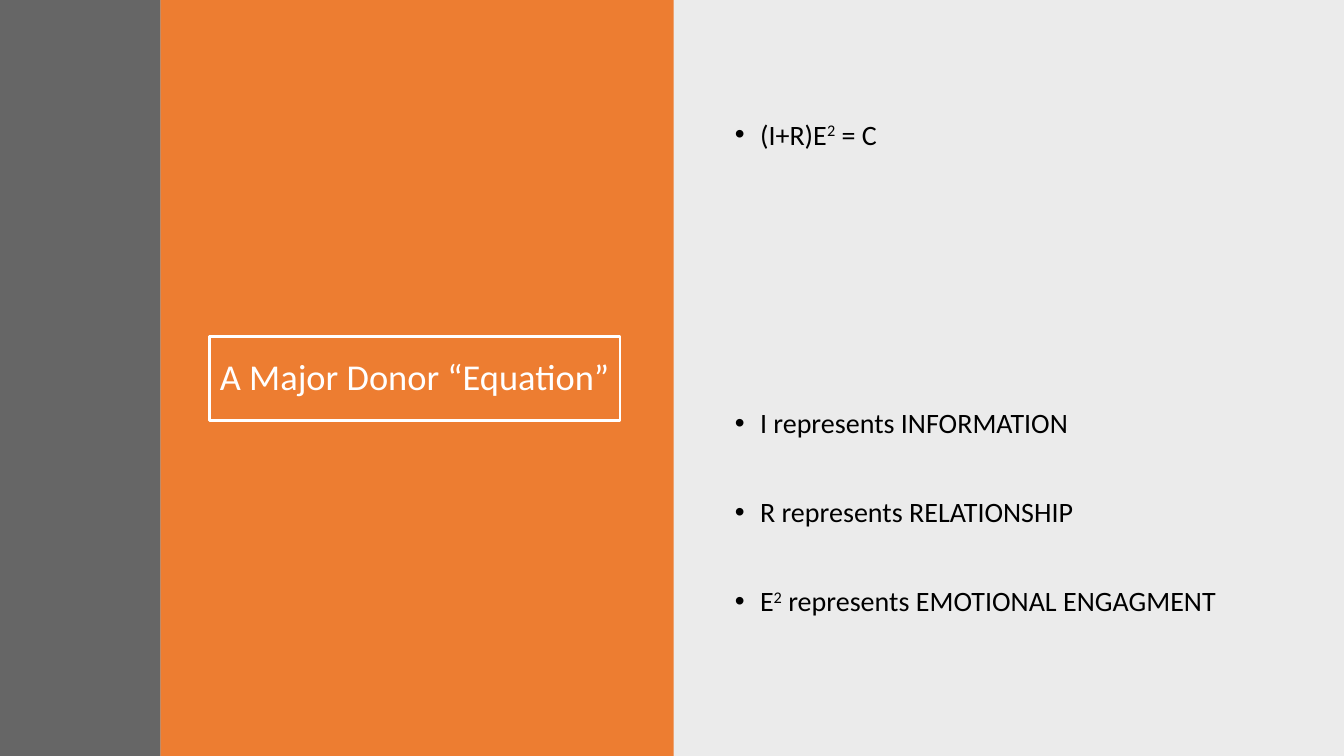
import pptx
import pptx.dml.color
import pptx.enum.shapes
import pptx.enum.text
import pptx.oxml
import pptx.oxml.ns
import pptx.util
from dataclasses import dataclass

Inches = pptx.util.Inches
Pt = pptx.util.Pt
Align = pptx.enum.text.PP_ALIGN
Anchor = pptx.enum.text.MSO_ANCHOR


@dataclass(frozen=True)
class Theme:
    font: str = "Calibri"
    title_size: int = 26
    body_size: int = 20
    white: str = "FFFFFF"
    black: str = "000000"
    orange: str = "ED7D31"
    charcoal: str = "404040"
    line_spacing: float = 0.9
    bullet_gap: int = 42
    bullet_indent: float = 0.25
    superscript: int = 30


def rgb(color):
    return pptx.dml.color.RGBColor.from_string(color)


def apply(target, values):
    for name, value in values.items():
        setattr(target, name, value)


def sub_element(parent, tag, **attributes):
    child = pptx.oxml.parse_xml(f"<{tag} {pptx.oxml.ns.nsdecls('a')}/>")
    for name, value in attributes.items():
        child.set(name, str(value))
    parent.append(child)


class DonorSlide:
    def __init__(self, presentation, theme):
        self.theme = theme
        self.slide = presentation.slides.add_slide(presentation.slide_layouts[5])

    def font_format(self, size, color):
        return {"name": self.theme.font, "size": Pt(size)}, rgb(color)

    def panel(self, left, width, color, opacity=100):
        panel = self.slide.shapes.add_shape(
            pptx.enum.shapes.MSO_SHAPE.RECTANGLE,
            Inches(left), Inches(0), Inches(width), Inches(7.5))
        panel.shadow.inherit = False
        panel.fill.solid()
        panel.fill.fore_color.rgb = rgb(color)
        panel.line.fill.background()
        if opacity < 100:
            fill_color = panel.fill._xPr.find(".//" + pptx.oxml.ns.qn("a:srgbClr"))
            sub_element(fill_color, "a:alpha", val=opacity * 1000)

    def title(self, text, left, top, width, height):
        title = self.slide.shapes.title
        # Bring the heading in front of the panels
        self.slide.shapes._spTree.append(title._element)
        apply(title, {"left": Inches(left), "top": Inches(top),
                      "width": Inches(width), "height": Inches(height)})
        title.line.color.rgb = rgb(self.theme.white)
        title.line.width = Pt(2)
        frame = title.text_frame
        apply(frame, {"text": text, "word_wrap": True,
                      "auto_size": pptx.enum.text.MSO_AUTO_SIZE.NONE,
                      "vertical_anchor": Anchor.MIDDLE,
                      "margin_left": Inches(0.05), "margin_right": Inches(0.05)})
        heading = frame.paragraphs[0]
        apply(heading, {"alignment": Align.CENTER,
                        "line_spacing": self.theme.line_spacing})
        values, color = self.font_format(self.theme.title_size, self.theme.white)
        apply(heading.runs[0].font, values)
        heading.runs[0].font.color.rgb = color

    def bullets(self, items, left, top, width, height):
        """Each item is a list of text parts; every second part is raised."""
        box = self.slide.shapes.add_textbox(
            Inches(left), Inches(top), Inches(width), Inches(height))
        frame = box.text_frame
        frame.word_wrap = True
        indent = Inches(self.theme.bullet_indent)
        for index, parts in enumerate(items):
            item = frame.add_paragraph() if index else frame.paragraphs[0]
            properties = item._p.get_or_add_pPr()
            apply(item, {"line_spacing": self.theme.line_spacing,
                         "space_before": Pt(self.theme.bullet_gap if index else 0)})
            properties.set("marL", str(indent))
            properties.set("indent", str(-indent))
            sub_element(properties, "a:buFont", typeface="Arial")
            sub_element(properties, "a:buChar", char="•")
            for position, text in enumerate(parts):
                part = item.add_run()
                part.text = text
                values, color = self.font_format(self.theme.body_size, self.theme.black)
                apply(part.font, values)
                part.font.color.rgb = color
                if position % 2:
                    part._r.get_or_add_rPr().set(
                        "baseline", str(self.theme.superscript * 1000))


def main():
    presentation = pptx.Presentation()
    apply(presentation, {"slide_width": Inches(13.33), "slide_height": Inches(7.5)})
    theme = Theme()
    donor = DonorSlide(presentation, theme)

    # Background panels
    donor.panel(6.67, 6.67, theme.black, opacity=8)
    donor.panel(1.59, 5.09, theme.orange)
    donor.panel(0, 1.59, theme.charcoal, opacity=80)

    # Heading
    donor.title("A Major Donor “Equation”", 2.08, 3.34, 4.07, 0.83)

    # Equation and the meaning of its terms
    donor.bullets([["(I+R)E", "2", " = C"]], 7.19, 1.15, 5.53, 2.34)
    donor.bullets([["I represents INFORMATION"],
                   ["R represents RELATIONSHIP"],
                   ["E", "2", " represents EMOTIONAL ENGAGMENT"]],
                  7.19, 4.01, 5.53, 2.79)

    presentation.save("out.pptx")


if __name__ == "__main__":
    main()
